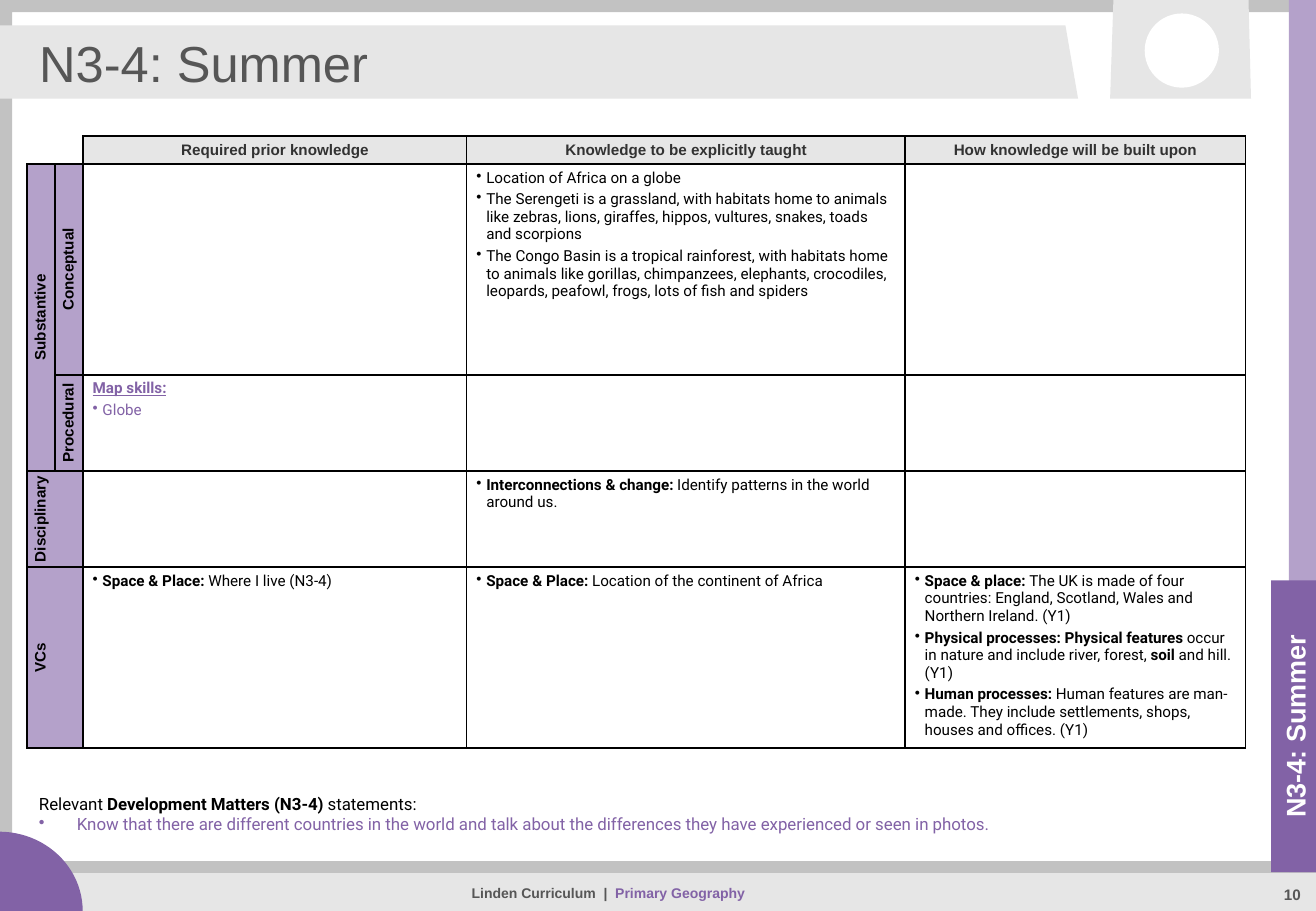
from lxml import etree
from pptx import Presentation
from pptx.dml.color import RGBColor
from pptx.enum.shapes import MSO_CONNECTOR, MSO_SHAPE
from pptx.enum.text import MSO_ANCHOR, PP_ALIGN
from pptx.oxml.ns import qn
from pptx.util import Pt

RECT, OVAL = MSO_SHAPE.RECTANGLE, MSO_SHAPE.OVAL
FRAME, ARC = MSO_SHAPE.FRAME, MSO_SHAPE.ARC
STRAIGHT = MSO_CONNECTOR.STRAIGHT
LEFT, CENTER = PP_ALIGN.LEFT, PP_ALIGN.CENTER
TOP, MIDDLE = MSO_ANCHOR.TOP, MSO_ANCHOR.MIDDLE

WIDE, HIGH = 780, 540
PURPLE, LILAC = "8262A6", "B4A1CA"
GREY, PALE, DARK = "C2C2C2", "E6E6E6", "565656"
BLACK, WHITE, INK = "000000", "FFFFFF", "323232"
TERM = "N3-4: Summer"

COLS = [16.6, 16.6, 227.5, 259.9, 201.6]
ROWS = [16, 125, 57, 57, 104]
HEADS = ["Required prior knowledge", "Knowledge to be explicitly taught",
         "How knowledge will be built upon"]
# Row, column and label of each side heading
SIDES = [(1, 0, "Substantive"), (1, 1, "Conceptual"), (2, 1, "Procedural"),
         (3, 0, "Disciplinary"), (4, 0, "VCs")]
# Bold words stand between double asterisks
NOTES = {
    (1, 3): [
        "Location of Africa on a globe",
        "The Serengeti is a grassland, with habitats home to animals like "
        "zebras, lions, giraffes, hippos, vultures, snakes, toads and scorpions",
        "The Congo Basin is a tropical rainforest, with habitats home to "
        "animals like gorillas, chimpanzees, elephants, crocodiles, leopards, "
        "peafowl, frogs, lots of fish and spiders"],
    (2, 2): ["**Map skills:**", "Globe"],
    (3, 3): ["**Interconnections & change: **Identify patterns in the world "
             "around us."],
    (4, 2): ["**Space & Place: **Where I live (N3-4)"],
    (4, 3): ["**Space & Place: **Location of the continent of Africa"],
    (4, 4): [
        "**Space & place: **The UK is made of four countries: England, "
        "Scotland, Wales and Northern Ireland. (Y1)",
        "**Physical processes: Physical features **occur in nature and "
        "include river, forest, **soil** and hill. (Y1)",
        "**Human processes: **Human features are man-made. They include "
        "settlements, shops, houses and offices. (Y1)"],
}


def color(code):
    return RGBColor.from_string(code)


def tag(parent, name, **attrs):
    return etree.SubElement(parent, qn(name), **attrs)


def paint(shape, code):
    shape.shadow.inherit = False
    shape.fill.solid()
    shape.fill.fore_color.rgb = color(code)
    shape.line.fill.background()
    return shape


def block(slide, kind, box, code):
    return paint(slide.shapes.add_shape(kind, *map(Pt, box)), code)


def outline(slide, points, code):
    pen = slide.shapes.build_freeform(Pt(points[0][0]), Pt(points[0][1]))
    pen.add_line_segments([(Pt(x), Pt(y)) for x, y in points[1:]])
    return paint(pen.convert_to_shape(), code)


def style(run, size, code, face, bold):
    font = run.font
    font.size, font.name, font.bold = Pt(size), face, bold
    font.color.rgb = color(code)


def rich(para, text, size, code, face="Arial", align=LEFT):
    """Write text, with the words between double asterisks in bold."""
    para.alignment = align
    for i, part in enumerate(text.split("**")):
        if part:
            run = para.add_run()
            run.text = part
            style(run, size, code, face, i % 2 == 1)


def bullet(para, indent):
    props = para._p.get_or_add_pPr()
    props.set("marL", str(Pt(indent)))
    props.set("indent", str(-Pt(indent)))
    tag(props, "a:buChar", char="•")


def label(slide, box, anchor=TOP):
    frame = slide.shapes.add_textbox(*map(Pt, box)).text_frame
    frame.word_wrap = True
    frame.vertical_anchor = anchor
    return frame


def border(slide):
    frame = block(slide, FRAME, (0, 0, WIDE, HIGH), GREY)
    frame.adjustments[0] = 7.2 / HIGH


def footer(slide, top):
    block(slide, RECT, (23, top, WIDE - 23, HIGH - top), PALE)
    rule = slide.shapes.add_connector(
        STRAIGHT, Pt(3.6), Pt(top - 3), Pt(WIDE), Pt(top - 3))
    rule.line.width = Pt(7)
    rule.line.color.rgb = color(GREY)
    tag(rule.element.spPr, "a:effectLst")
    block(slide, ARC, (-50, top - 24, 99, 94), PURPLE)
    para = label(slide, (148, top + 2, 425, 22), MIDDLE).paragraphs[0]
    rich(para, "**Linden Curriculum  |  **", 8.3, DARK, align=CENTER)
    rich(para, "**Primary Geography**", 8.3, PURPLE, align=CENTER)
    para.line_spacing = 0.9
    para = label(slide, (743, top + 2, 46, 20)).paragraphs[0]
    rich(para, "**10**", 9, DARK, align=CENTER)
    para.line_spacing = 1.2


def header(slide, top, base):
    outline(slide, [(-1, top), (631.5, top), (639, base), (-1, base)], PALE)
    outline(slide, [(660, -1), (740, -1), (741.5, base), (658, base)], PALE)
    block(slide, OVAL, (678.5, 8, 44, 44), WHITE)
    title = slide.shapes.title
    slide.shapes.element.append(title.element)
    title.left, title.top, title.width, title.height = map(
        Pt, (16, top + 4, 606, 36))
    frame = title.text_frame
    frame.text = TERM
    frame.vertical_anchor = MIDDLE
    frame.paragraphs[0].alignment = LEFT
    style(frame.paragraphs[0].runs[0], 30, DARK, "Arial", False)


def sidebar(slide, left, high):
    block(slide, RECT, (left, 0, 17, high), LILAC)
    # The tab is turned about its centre
    wide, deep = 173, 28
    x, y = left + 3.5, high - wide / 2
    tab = block(slide, RECT, (x - wide / 2, y - deep / 2, wide, deep), PURPLE)
    tab.rotation = 270
    frame = tab.text_frame
    frame.vertical_anchor = MIDDLE
    rich(frame.paragraphs[0], f"**{TERM}**", 16, WHITE, align=CENTER)


def edge(cell, sides):
    """Draw the named sides in black and clear the others."""
    props = cell._tc.get_or_add_tcPr()
    for side in "LRTB":
        line = tag(props, f"a:ln{side}", w=str(Pt(1)))
        if side in sides:
            tag(tag(line, "a:solidFill"), "a:srgbClr", val=BLACK)
        else:
            tag(line, "a:noFill")


def pad(cell, side, end):
    cell.margin_left = cell.margin_right = Pt(side)
    cell.margin_top = cell.margin_bottom = Pt(end)


def caption(cell, text, code):
    pad(cell, 2.9, 2.9)
    cell.vertical_anchor = MIDDLE
    rich(cell.text_frame.paragraphs[0], f"**{text}**", 9, code, align=CENTER)


def notes(cell, items, code):
    """List the items; one that is bold to its end is a heading."""
    frame = cell.text_frame
    for i, item in enumerate(items):
        para = frame.add_paragraph() if i else frame.paragraphs[0]
        head = item.endswith("**")
        if not head:
            bullet(para, 5.8)
        para.space_after = Pt(2)
        rich(para, item, 9, code, "Roboto")
        if head:
            para.runs[0].font.underline = True


def grid(slide, left, top):
    table = slide.shapes.add_table(
        len(ROWS), len(COLS), Pt(left), Pt(top),
        Pt(sum(COLS)), Pt(sum(ROWS))).table
    table.first_row = table.horz_banding = False
    for col, wide in zip(table.columns, COLS):
        col.width = Pt(wide)
    for r, high in enumerate(ROWS):
        table.rows[r].height = Pt(high)
        for c in range(len(COLS)):
            cell = table.cell(r, c)
            corner = r == 0 and c < 2
            edge(cell, ("B", "RB")[c] if corner else "LRTB")
            pad(cell, 5.8, 2.9)
            if corner:
                cell.fill.background()
            else:
                cell.fill.solid()
                cell.fill.fore_color.rgb = color(
                    PALE if r == 0 else LILAC if c < 2 else WHITE)
            if (r, c) not in NOTES and (corner or r and c > 1):
                tag(cell.text_frame.paragraphs[0]._p, "a:endParaRPr", sz="900")
    table.cell(1, 0).merge(table.cell(2, 0))
    for r in (3, 4):
        table.cell(r, 0).merge(table.cell(r, 1))
    for c, text in enumerate(HEADS, 2):
        caption(table.cell(0, c), text, INK)
    for r, c, text in SIDES:
        cell = table.cell(r, c)
        caption(cell, text, BLACK)
        cell._tc.get_or_add_tcPr().set("vert", "vert270")
    for (r, c), items in NOTES.items():
        notes(table.cell(r, c), items, PURPLE if r == 2 else BLACK)


def matters(slide, box):
    frame = label(slide, box)
    rich(frame.paragraphs[0],
         "Relevant **Development Matters (N3-4) **statements:",
         10, BLACK, "Roboto")
    para = frame.add_paragraph()
    bullet(para, 22.5)
    rich(para, "Know that there are different countries in the world and talk "
         "about the differences they have experienced or seen in photos.",
         10, PURPLE, "Roboto")


def main():
    deck = Presentation()
    deck.slide_width, deck.slide_height = Pt(WIDE), Pt(HIGH)
    slide = deck.slides.add_slide(deck.slide_layouts[5])
    border(slide)
    footer(slide, 517)
    header(slide, 15, 58.5)
    sidebar(slide, 764, 517)
    matters(slide, (16, 467, 649, 50))
    grid(slide, 16, 80.6)
    deck.save("out.pptx")


if __name__ == "__main__":
    main()
